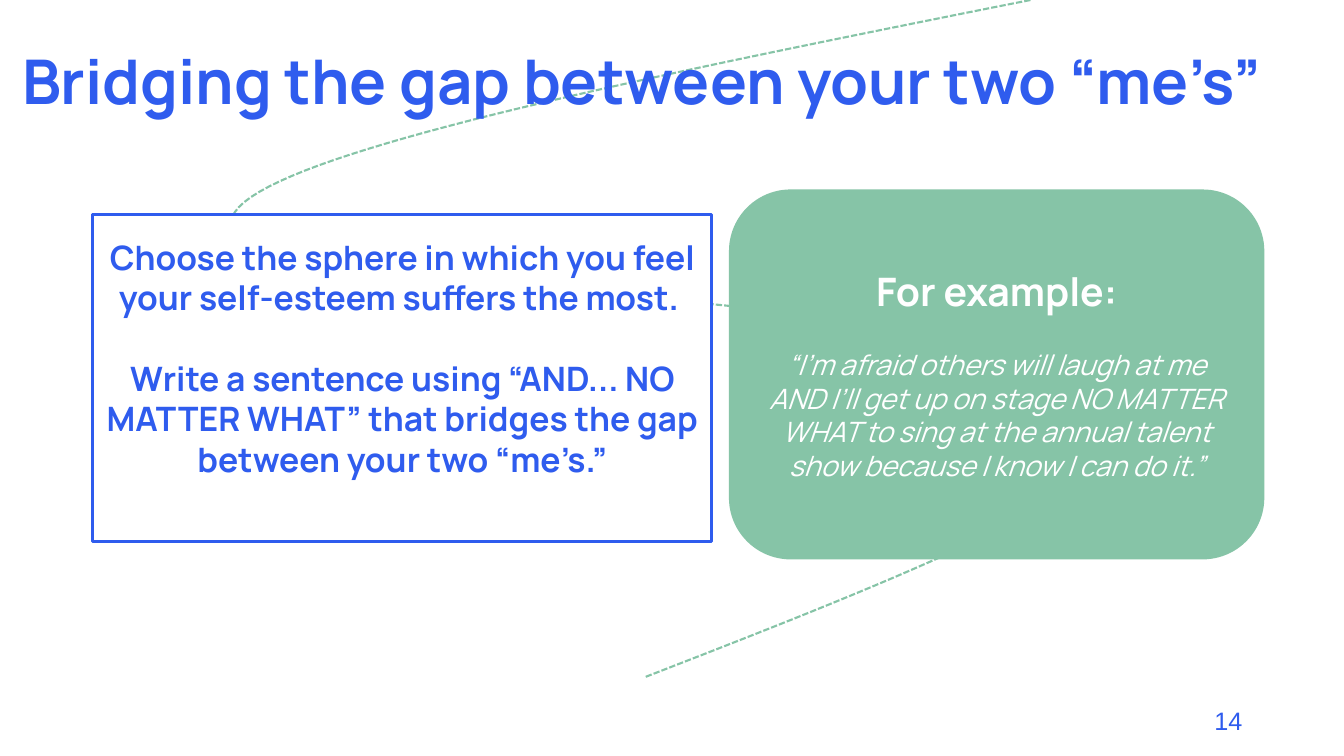
from pptx import Presentation
from pptx.dml.color import RGBColor
from pptx.enum import dml, shapes, text
from pptx.util import Inches, Pt

COLORS = {"blue": "2F5CEE", "green": "86C4A7", "white": "FFFFFF"}
CURVE_START = (10.22, 0)
CURVE_PARTS = [  # two control points and an end point each
    ((6.17, 0.81), (2.12, 1.62), (2.3, 2.25)),
    ((2.49, 2.88), (10.65, 3.04), (11.33, 3.79)),
    ((12.01, 4.53), (9.2, 5.63), (6.39, 6.72)),
]
STEPS = 40


def color(name):
    return RGBColor.from_string(COLORS[name])


def add_text(p, words, size, name, font="Manrope", bold=False, italic=False,
             align=text.PP_ALIGN.CENTER):
    p.text = words
    p.alignment = align
    for r in p.runs:
        r.font.name, r.font.size = font, Pt(size)
        r.font.bold, r.font.italic = bold, italic
        r.font.color.rgb = color(name)


def add_frame(sp):
    tf = sp.text_frame
    tf.word_wrap = True
    tf.vertical_anchor = text.MSO_ANCHOR.MIDDLE
    return tf


def bezier(points, t):
    weights = ((1 - t) ** 3, 3 * t * (1 - t) ** 2, 3 * t ** 2 * (1 - t), t ** 3)
    return tuple(Inches(sum(w * pt[axis] for w, pt in zip(weights, points)))
                 for axis in (0, 1))


def add_winding_line(s):
    """Dashed curve behind the cards, drawn as short straight steps."""
    start, vertices = CURVE_START, []
    for part in CURVE_PARTS:
        points = (start, *part)
        vertices += [bezier(points, i / STEPS) for i in range(1, STEPS + 1)]
        start = part[-1]
    x, y = CURVE_START
    builder = s.shapes.build_freeform(Inches(x), Inches(y))
    builder.add_line_segments(vertices, close=False)
    sp = builder.convert_to_shape()
    sp.shadow.inherit = False
    sp.fill.background()
    sp.line.color.rgb = color("green")
    sp.line.width = Pt(1.5)
    sp.line.dash_style = dml.MSO_LINE.SQUARE_DOT


def add_title(s, box):
    tf = add_frame(s.shapes.add_textbox(*map(Inches, box)))
    p = tf.paragraphs[0]
    add_text(p, "Bridging the gap between your two “me’s”", 44, "blue",
             bold=True, align=text.PP_ALIGN.LEFT)
    p.line_spacing = 0.9


def add_page_number(s, box):
    tf = add_frame(s.shapes.add_textbox(*map(Inches, box)))
    add_text(tf.paragraphs[0], "14", 18, "blue", font="Arial",
             align=text.PP_ALIGN.RIGHT)


def add_card(s, kind, box, fill):
    sp = s.shapes.add_shape(kind, *map(Inches, box))
    sp.shadow.inherit = False
    sp.fill.solid()
    sp.fill.fore_color.rgb = color(fill)
    sp.line.fill.background()
    return sp


def add_task_card(s, box):
    sp = add_card(s, shapes.MSO_SHAPE.RECTANGLE, box, "white")
    sp.line.color.rgb = color("blue")
    sp.line.width = Pt(2.25)
    tf = add_frame(sp)
    tf.margin_bottom = Inches(0.45)
    choose, write = tf.paragraphs[0], tf.add_paragraph()
    add_text(choose, "Choose the sphere in which you feel your self-esteem "
             "suffers the most. ", 24, "blue", bold=True)
    add_text(write, "Write a sentence using “AND... NO MATTER WHAT” that "
             "bridges the gap between your two “me’s.”", 24, "blue", bold=True)
    write.space_before = Pt(29)


def add_example_card(s, box):
    sp = add_card(s, shapes.MSO_SHAPE.ROUNDED_RECTANGLE, box, "green")
    tf = add_frame(sp)
    heading, quote = tf.paragraphs[0], tf.add_paragraph()
    add_text(heading, "For example:", 28, "white", bold=True)
    add_text(quote, "“I’m afraid others will laugh at me AND I’ll get up on "
             "stage NO MATTER WHAT to sing at the annual talent show because "
             "I know I can do it.”", 20, "white", italic=True)
    quote.space_before = Pt(24)


def main():
    prs = Presentation()
    prs.slide_width, prs.slide_height = Inches(13.33), Inches(7.5)
    s = prs.slides.add_slide(prs.slide_layouts[6])
    add_winding_line(s)
    add_page_number(s, (9.42, 6.95, 3, 0.4))
    add_title(s, (0.12, 0.32, 12.91, 1.03))
    add_task_card(s, (0.92, 2.13, 6.14, 3.24))
    add_example_card(s, (7.23, 1.88, 5.31, 3.67))
    prs.save("out.pptx")


if __name__ == "__main__":
    main()
